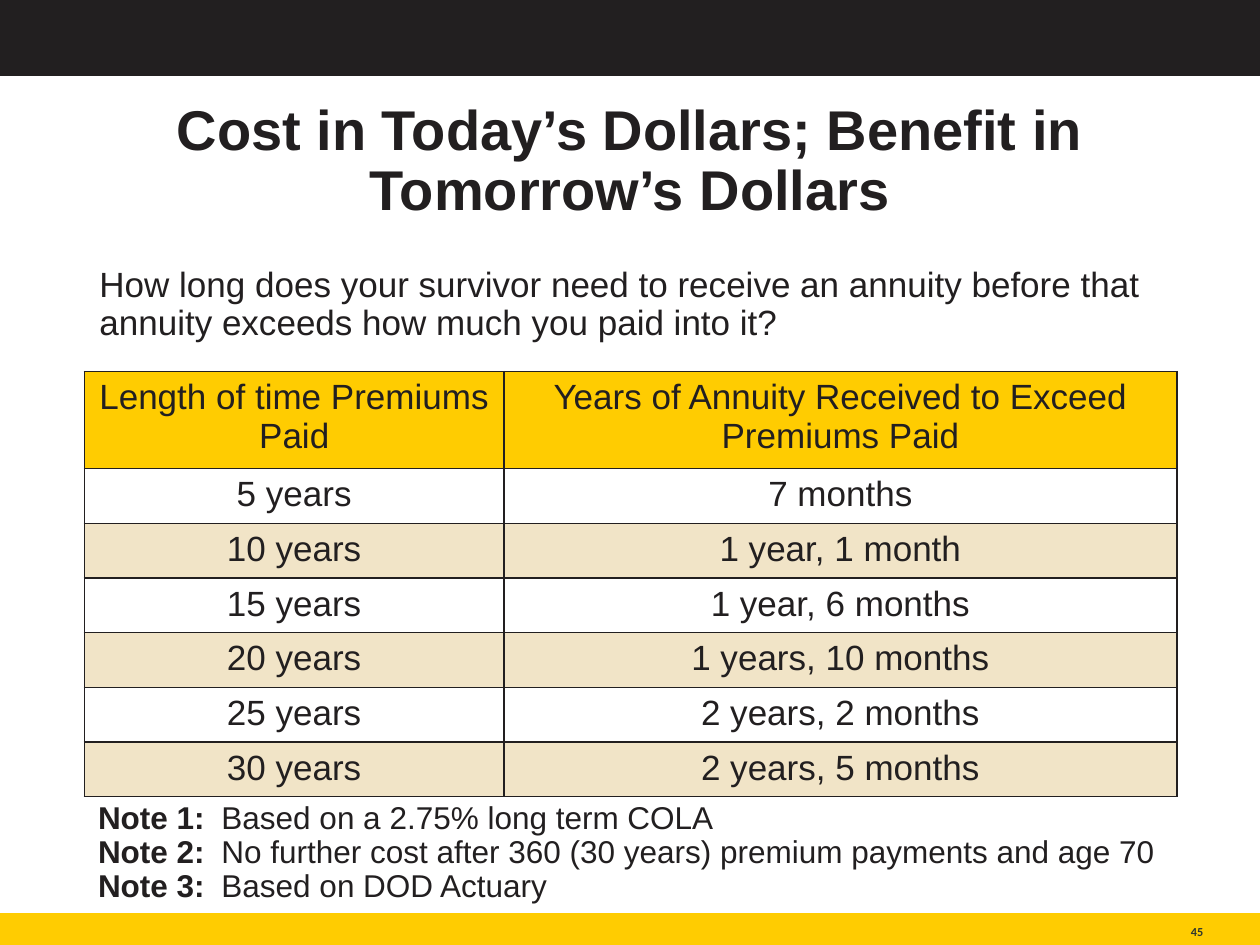
from pptx import Presentation
from pptx.dml.color import RGBColor
from pptx.enum.shapes import MSO_SHAPE as SHAPE
from pptx.enum.text import MSO_ANCHOR as ANCHOR, PP_ALIGN as ALIGN
from pptx.oxml import parse_xml
from pptx.oxml.ns import nsdecls
from pptx.util import Inches, Pt

BLACK = RGBColor(0x22, 0x1F, 0x20)
GOLD = RGBColor(0xFF, 0xCC, 0x01)
CREAM = RGBColor(0xF1, 0xE4, 0xC7)
WHITE = RGBColor(0xFF, 0xFF, 0xFF)
GREY = RGBColor(0x2F, 0x37, 0x2F)

ROWS = [
    ("Length of time Premiums Paid", "Years of Annuity Received to Exceed Premiums Paid"),
    ("5 years", "7 months"),
    ("10 years", "1 year, 1 month"),
    ("15 years", "1 year, 6 months"),
    ("20 years", "1 years, 10 months"),
    ("25 years", "2 years, 2 months"),
    ("30 years", "2 years, 5 months"),
]
NOTES = [
    ("Note 1:", "Based on a 2.75% long term COLA"),
    ("Note 2:", "No further cost after 360 (30 years) premium payments and age 70"),
    ("Note 3:", "Based on DOD Actuary"),
]


def style(r, size, bold=False, color=BLACK, name="Arial"):
    r.font.size = Pt(size)
    r.font.bold = bold
    r.font.color.rgb = color
    r.font.name = name


def add_bar(s, box, color):
    sp = s.shapes.add_shape(SHAPE.RECTANGLE, *box)
    sp.shadow.inherit = False
    sp.fill.solid()
    sp.fill.fore_color.rgb = color
    sp.line.color.rgb = color
    sp.line.width = Pt(1)


def add_text(s, box, text, size, bold=False, align=ALIGN.LEFT):
    tf = s.shapes.add_textbox(*box).text_frame
    tf.word_wrap = True
    tf.vertical_anchor = ANCHOR.MIDDLE
    tf.text = text
    p = tf.paragraphs[0]
    p.alignment = align
    p.line_spacing = 0.9
    style(p.runs[0], size, bold)


def add_page_number(s, box, number):
    tf = s.shapes.add_textbox(*box).text_frame
    tf.word_wrap = False
    tf.vertical_anchor = ANCHOR.BOTTOM
    tf.margin_left = tf.margin_right = tf.margin_top = tf.margin_bottom = 0
    tf.text = number
    p = tf.paragraphs[0]
    p.alignment = ALIGN.RIGHT
    style(p.runs[0], 7, True, GREY, "Calibri")


def add_borders(cell):
    tc_pr = cell._tc.get_or_add_tcPr()
    for i, side in enumerate(("lnL", "lnR", "lnT", "lnB")):
        tc_pr.insert(i, parse_xml(
            f'<a:{side} {nsdecls("a")} w="{Pt(1)}"><a:solidFill>'
            f'<a:srgbClr val="{BLACK}"/></a:solidFill></a:{side}>'))


def add_annuity_table(s, box):
    left, top, width, height = box
    table = s.shapes.add_table(len(ROWS), 2, left, top, width, height).table
    table.columns[0].width = Inches(3.33)
    table.columns[1].width = width - Inches(3.33)
    header = Inches(0.77)
    for i, row in enumerate(ROWS):
        table.rows[i].height = header if i == 0 else (height - header) // (len(ROWS) - 1)
        fill = GOLD if i == 0 else (CREAM, WHITE)[i % 2]
        for j, text in enumerate(row):
            cell = table.cell(i, j)
            cell.text = text
            cell.fill.solid()
            cell.fill.fore_color.rgb = fill
            p = cell.text_frame.paragraphs[0]
            p.alignment = ALIGN.CENTER
            style(p.runs[0], 20)
            add_borders(cell)


def add_notes(s, box):
    tf = s.shapes.add_textbox(*box).text_frame
    tf.word_wrap = True
    for i, (label, note) in enumerate(NOTES):
        p = tf.paragraphs[0] if i == 0 else tf.add_paragraph()
        p.line_spacing = 0.9
        p._p.get_or_add_pPr().append(parse_xml(
            f'<a:tabLst {nsdecls("a")}><a:tab pos="{Inches(0.98)}" algn="l"/></a:tabLst>'))
        for text, bold in ((label, True), ("\t" + note, False)):
            r = p.add_run()
            r.text = text
            style(r, 18, bold)


def box(*lengths):
    return [Inches(length) for length in lengths]


def main():
    prs = Presentation()
    prs.slide_width, prs.slide_height = Inches(10), Inches(7.5)
    s = prs.slides.add_slide(prs.slide_layouts[6])
    add_bar(s, box(0, 0.01, 10, 0.59), BLACK)
    add_bar(s, box(0, 7.25, 10, 0.27), GOLD)
    add_page_number(s, box(8.68, 7.25, 0.87, 0.2), "45")
    add_text(s, box(0.69, 0.74, 8.62, 1.1),
             "Cost in Today’s Dollars; Benefit in Tomorrow’s Dollars", 32, True, ALIGN.CENTER)
    add_text(s, box(0.69, 2, 8.62, 0.84),
             "How long does your survivor need to receive an annuity before that "
             "annuity exceeds how much you paid into it?", 20)
    add_annuity_table(s, box(0.67, 2.95, 8.67, 3.37))
    add_notes(s, box(0.68, 6.32, 8.63, 0.92))
    prs.save("out.pptx")


if __name__ == "__main__":
    main()
